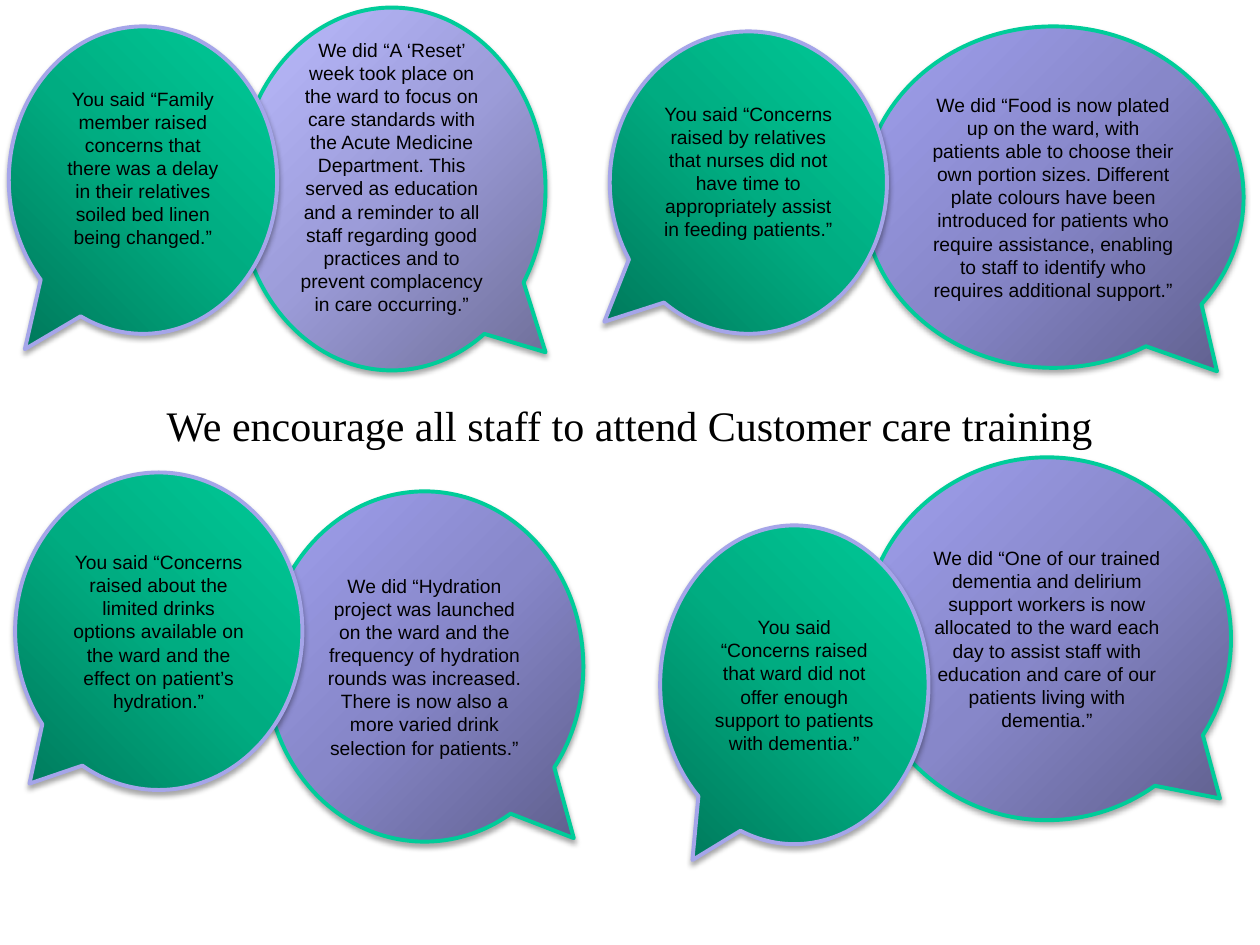
from typing import NamedTuple

from lxml.etree import SubElement
from pptx import Presentation
from pptx.dml.color import RGBColor
from pptx.enum.shapes import MSO_SHAPE
from pptx.enum.text import MSO_ANCHOR, MSO_AUTO_SIZE, PP_ALIGN
from pptx.oxml.ns import qn
from pptx.util import Inches, Pt

COLUMNS, ROWS = 100, 75
WIDTH, HEIGHT = Inches(10), Inches(7.5)

BLACK = RGBColor(0x00, 0x00, 0x00)
GREEN = RGBColor(0x00, 0xCC, 0x99)
LILAC = RGBColor(0xA5, 0xA5, 0xE9)
GREEN_SHADES = (RGBColor(0x00, 0x79, 0x5B), RGBColor(0x00, 0xAC, 0x81), GREEN)
VIOLET_SHADES = (RGBColor(0x5F, 0x5F, 0x8D), RGBColor(0x87, 0x87, 0xC9),
                 RGBColor(0xA0, 0xA0, 0xEE))
PALE_SHADES = (RGBColor(0x6E, 0x6E, 0x98), RGBColor(0x9C, 0x9C, 0xD9),
               RGBColor(0xBB, 0xBB, 0xFF))


class Bubble(NamedTuple):
    """Box is left, top, width, height in grid units from the exchange's corner."""
    box: tuple
    tail: tuple
    words: str
    shades: tuple
    lift: float = 0  # extra bottom inset, in points


# Corner of each exchange on the grid, the reply, then the comment in front of it
EXCHANGES = [
    ((0.7, 0.6),
     Bubble((18.2, 0, 24.4, 28.8), (0.5, 0.45),
            "We did “A ‘Reset’ week took place on the ward to focus on care standards "
            "with the Acute Medicine Department. This served as education and a reminder "
            "to all staff regarding good practices and to prevent complacency in care "
            "occurring.”", PALE_SHADES, 14),
     Bubble((0, 1.5, 21.3, 24.4), (-0.44, 0.55),
            "You said “Family member raised concerns that there was a delay in their "
            "relatives soiled bed linen being changed.”", GREEN_SHADES, 14)),
    ((48.4, 2.1),
     Bubble((20.1, 0, 30.2, 27.1), (0.43, 0.51),
            "We did “Food is now plated up on the ward, with patients able to choose "
            "their own portion sizes. Different plate colours have been introduced for "
            "patients who require assistance, enabling to staff to identify who requires "
            "additional support.”", VIOLET_SHADES),
     Bubble((0, 0.4, 22, 24), (-0.52, 0.46),
            "You said “Concerns raised by relatives that nurses did not have time to "
            "appropriately assist in feeding patients.”", GREEN_SHADES, 13)),
    ((1.2, 37.5),
     Bubble((19.9, 1.5, 25.2, 27.8), (0.47, 0.49),
            "We did “Hydration project was launched on the ward and the frequency of "
            "hydration rounds was increased. There is now also a more varied drink "
            "selection for patients.”", VIOLET_SHADES),
     Bubble((0, 0, 22.8, 25.2), (-0.45, 0.48),
            "You said “Concerns raised about the limited drinks options available on the "
            "ward and the effect on patient’s hydration.”", GREEN_SHADES)),
    ((52.4, 36.3),
     Bubble((16.1, 0, 29.2, 28.8), (0.47, 0.44),
            "We did “One of our trained dementia and delirium support workers is now "
            "allocated to the ward each day to assist staff with education and care of "
            "our patients living with dementia.”", VIOLET_SHADES),
     Bubble((0, 5.4, 21.3, 25.3), (-0.38, 0.55),
            "You said “Concerns raised that ward did not offer enough support to patients "
            "with dementia.”", GREEN_SHADES)),
]


def on_grid(left, top, width, height):
    column, row = WIDTH / COLUMNS, HEIGHT / ROWS
    return (round(left * column), round(top * row),
            round(width * column), round(height * row))


def format_text(text_frame, font_name, size):
    paragraph = text_frame.paragraphs[0]
    paragraph.alignment = PP_ALIGN.CENTER
    font = paragraph.runs[0].font
    font.name, font.size, font.color.rgb = font_name, Pt(size), BLACK


def add_colour(parent, colour):
    return SubElement(parent, qn("a:srgbClr"), val=str(colour))


def shade_from_corner(shape, shades, from_right):
    """Fill with a circular gradient that starts at a bottom corner."""
    shape.fill.gradient()
    gradient = shape._element.spPr.find(qn("a:gradFill"))
    for child in list(gradient):
        gradient.remove(child)
    stops = SubElement(gradient, qn("a:gsLst"))
    for position, shade in zip((0, 50000, 100000), shades):
        add_colour(SubElement(stops, qn("a:gs"), pos=str(position)), shade)
    circle = SubElement(gradient, qn("a:path"), path="circle")
    side = "l" if from_right else "r"
    SubElement(circle, qn("a:fillToRect"), {side: "100000", "t": "100000"})


def add_soft_shadow(shape):
    shape.shadow.inherit = False
    effects = shape._element.spPr.find(qn("a:effectLst"))
    shadow = SubElement(effects, qn("a:outerShdw"), blurRad=str(Pt(3.1)),
                        dist=str(Pt(1.8)), dir="5400000", rotWithShape="0")
    SubElement(add_colour(shadow, BLACK), qn("a:alpha"), val="35000")


def add_bubble(slide, corner, bubble):
    left, top, width, height = bubble.box
    box = on_grid(corner[0] + left, corner[1] + top, width, height)
    callout = slide.shapes.add_shape(MSO_SHAPE.OVAL_CALLOUT, *box)
    callout.adjustments[0], callout.adjustments[1] = bubble.tail
    is_reply = bubble.tail[0] > 0
    shade_from_corner(callout, bubble.shades, from_right=is_reply)
    callout.line.color.rgb = GREEN if is_reply else LILAC
    callout.line.width = Pt(2.25)
    add_soft_shadow(callout)

    text_frame = callout.text_frame
    text_frame.text = bubble.words
    text_frame.word_wrap = True
    text_frame.vertical_anchor = MSO_ANCHOR.MIDDLE
    text_frame.margin_bottom = Inches(0.05) + Pt(bubble.lift)
    format_text(text_frame, "Arial", 11)


def add_exchange(slide, corner, reply, comment):
    for bubble in (reply, comment):
        add_bubble(slide, corner, bubble)


def add_headline(slide, box):
    title = slide.shapes.title
    title.left, title.top, title.width, title.height = on_grid(*box)
    text_frame = title.text_frame
    text_frame.text = "We encourage all staff to attend Customer care training"
    text_frame.word_wrap = True
    text_frame.auto_size = MSO_AUTO_SIZE.NONE
    text_frame.vertical_anchor = MSO_ANCHOR.MIDDLE
    format_text(text_frame, "Times New Roman", 24)


def main():
    presentation = Presentation()
    presentation.slide_width, presentation.slide_height = WIDTH, HEIGHT
    slide = presentation.slides.add_slide(
        presentation.slide_layouts.get_by_name("Title Only"))
    add_headline(slide, (7.5, 31.2, 85, 5))
    for exchange in EXCHANGES:
        add_exchange(slide, *exchange)
    presentation.save("out.pptx")


if __name__ == "__main__":
    main()
